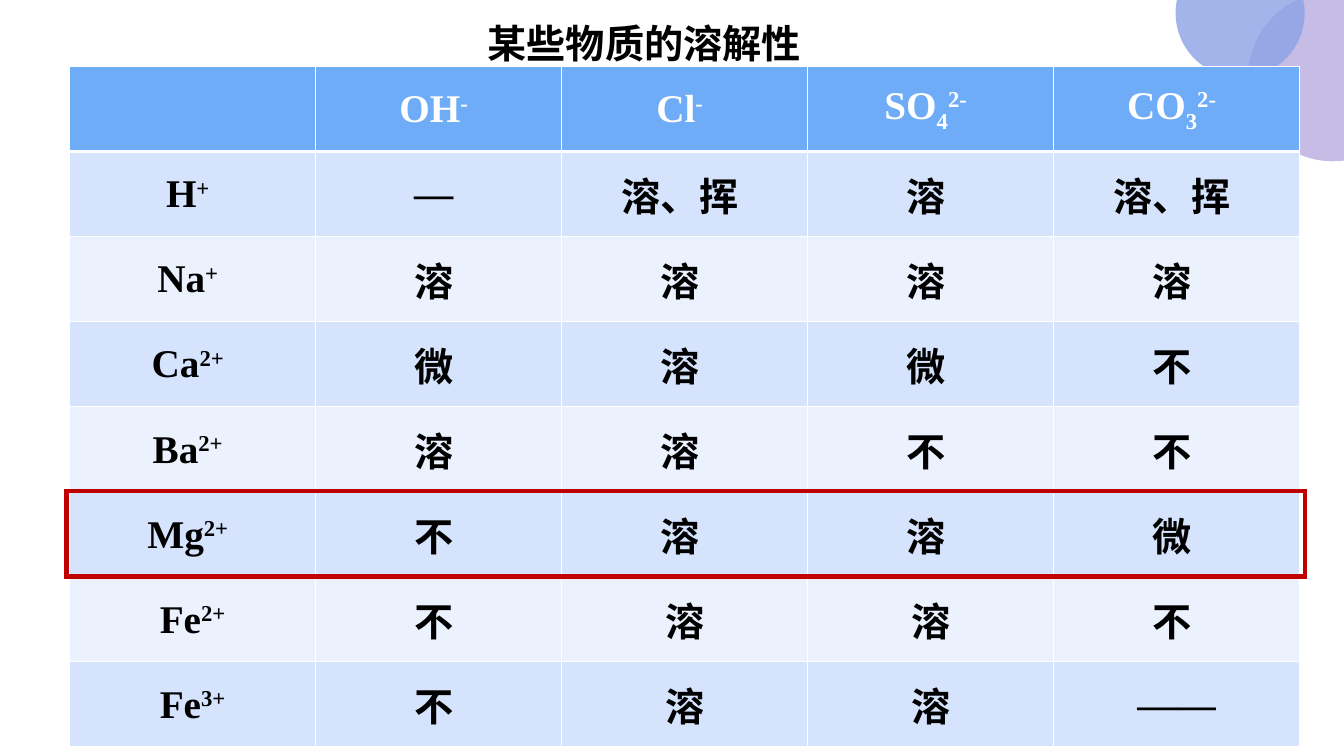
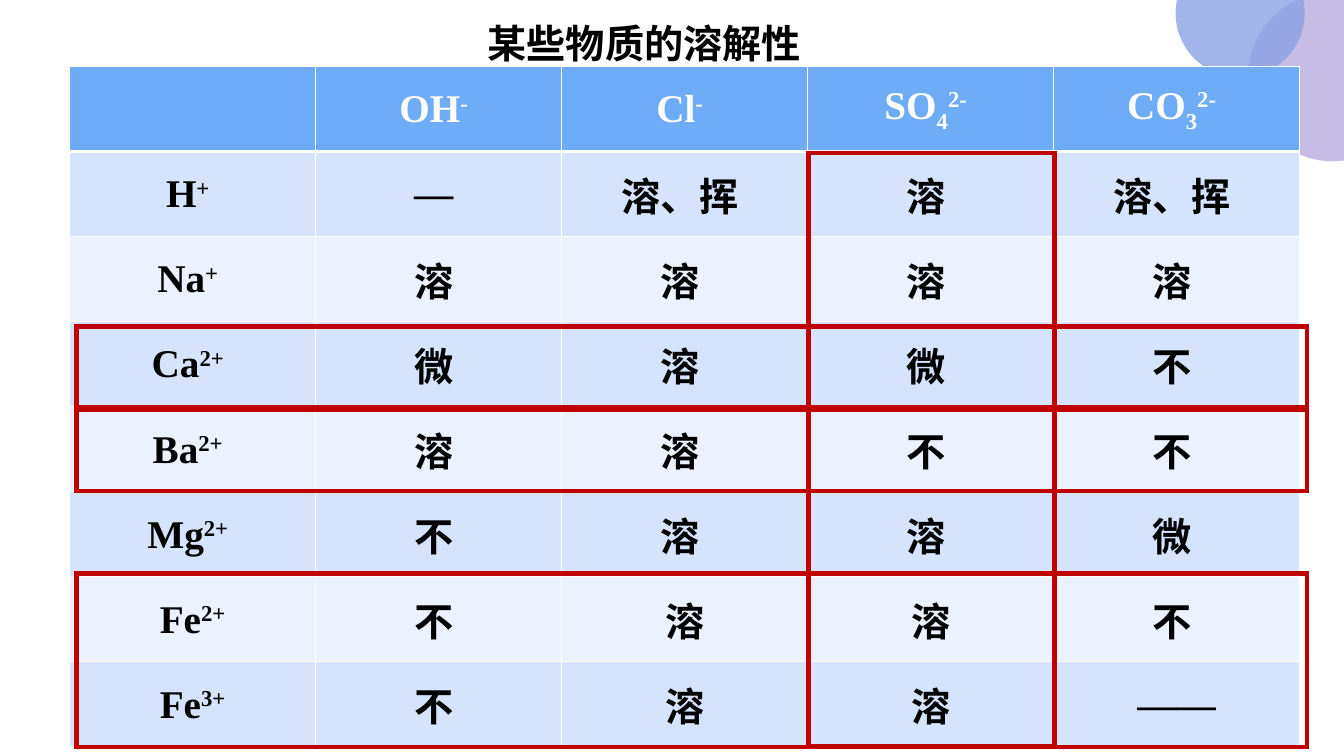
import math
import typing

import lxml.etree
import pptx
import pptx.dml.color
import pptx.enum.shapes
import pptx.enum.text
import pptx.oxml.ns
import pptx.presentation
import pptx.slide
import pptx.table
import pptx.text.text
import pptx.util

Inches = pptx.util.Inches
Pt = pptx.util.Pt
qn = pptx.oxml.ns.qn

SLIDE_WIDTH, SLIDE_HEIGHT = 13.33, 7.5
TITLE = "某些物质的溶解性"
BLACK, WHITE, RED = "000000", "FFFFFF", "C00000"
HEADER_BLUE = "6EACF7"
BANDS = ("D5E3FC", "EBF1FD")
TITLE_FONT = {"name": "Arial", "size": Pt(28), "bold": True}
CELL_FONT = {"name": "Times New Roman", "size": Pt(28), "bold": True}
CELL_FORMAT = {
    "vertical_anchor": pptx.enum.text.MSO_ANCHOR.MIDDLE,
    "margin_left": Inches(0.07),
    "margin_right": Inches(0.07),
    "margin_top": Inches(0.01),
    "margin_bottom": 0,
}
SUPERSCRIPT, SUBSCRIPT = 30000, -25000


class Box(typing.NamedTuple):
    left: float
    top: float
    width: float
    height: float

    def lengths(self) -> list[int]:
        return [Inches(value) for value in self]


class CutCircle(typing.NamedTuple):
    """A circle that the slide edges cut: arc stops in degrees, then corners."""
    x: float
    y: float
    radius: float
    color: str
    opacity: int
    stops: tuple[int, ...]
    corners: tuple[tuple[float, float], ...] = ()

    def point(self, degree: float, reach: float = 1) -> tuple[int, int]:
        angle = math.radians(degree)
        distance = self.radius * reach
        return (Inches(self.x + distance * math.cos(angle)),
                Inches(self.y + distance * math.sin(angle)))


class Ion(typing.NamedTuple):
    symbol: str
    charge: str = ""
    count: str = ""
    tail: str = " "


class Cation(typing.NamedTuple):
    ion: Ion
    solubility: tuple[str, ...]


TITLE_BOX = Box(0.76, 0.14, 11.26, 0.57)
TABLE_BOX = Box(0.69, 0.66, 12.2, 6.75)
CORNER_CIRCLES = (
    CutCircle(13.22, 0.76, 0.84, "A595D7", 63, (82, 90, 180, 245), ((SLIDE_WIDTH, 0),)),
    CutCircle(12.3, 0.13, 0.64, "8CA2E6", 80, (-12, 0, 90, 180, 192)),
)
ANIONS = (Ion("OH", "-"), Ion("Cl", "-"), Ion("SO", "2-", "4"), Ion("CO", "2-", "3"))
CATIONS = (
    Cation(Ion("H", "+"), ("— ", "溶、挥 ", "溶 ", "溶、挥 ")),
    Cation(Ion("Na", "+"), ("溶 ", "溶 ", "溶 ", "溶 ")),
    Cation(Ion("Ca", "2+"), ("微 ", "溶 ", "微 ", "不 ")),
    Cation(Ion("Ba", "2+"), ("溶 ", "溶 ", "不 ", "不 ")),
    Cation(Ion("Mg", "2+"), ("不 ", "溶 ", "溶 ", "微 ")),
    Cation(Ion("Fe", "2+", tail=""), ("不 ", "溶", "溶", "不 ")),
    Cation(Ion("Fe", "3+", tail=""), ("不 ", "溶", "溶", "——")),
)
# Red frames, one tuple per slide
HIGHLIGHTS = (
    (Box(0.66, 4.87, 12.28, 0.85),),
    (
        Box(0.76, 3.24, 12.2, 0.8),
        Box(8.02, 1.52, 2.44, 5.88),
        Box(0.76, 4.07, 12.2, 0.8),
        Box(0.76, 5.69, 12.2, 1.72),
    ),
)


def rgb(color: str) -> pptx.dml.color.RGBColor:
    return pptx.dml.color.RGBColor.from_string(color)


def apply(target: typing.Any, values: dict[str, typing.Any]) -> None:
    for name, value in values.items():
        setattr(target, name, value)


def add_run(paragraph: pptx.text.text._Paragraph, text: str, font: dict,
            color: str, baseline: int = 0) -> None:
    run = paragraph.add_run()
    run.text = text
    apply(run.font, font)
    run.font.color.rgb = rgb(color)
    if baseline:
        run._r.get_or_add_rPr().set("baseline", str(baseline))


def add_corner_circle(slide: pptx.slide.Slide, circle: CutCircle) -> None:
    """Draw the visible part of a circle and move it to the layout."""
    points = [circle.point(stop) for stop in circle.stops]
    points += [(Inches(x), Inches(y)) for x, y in circle.corners]
    builder = slide.shapes.build_freeform(*points[0])
    builder.add_line_segments(points[1:], close=True)
    shape = builder.convert_to_shape()
    shape.shadow.inherit = False
    shape.line.fill.background()
    shape.fill.solid()
    shape.fill.fore_color.rgb = rgb(circle.color)
    properties = shape._element.spPr
    fill_color = properties.find(f"{qn('a:solidFill')}/{qn('a:srgbClr')}")
    alpha = lxml.etree.SubElement(fill_color, qn("a:alpha"))
    alpha.set("val", str(circle.opacity * 1000))

    # Bend the straight segments between arc stops into curves
    segments = list(properties.iter(qn("a:lnTo")))
    for segment, start, end in zip(segments, circle.stops, circle.stops[1:]):
        handle = 4 / 3 * math.tan(math.radians(end - start) / 4)
        reach = math.hypot(1, handle)
        turn = math.degrees(math.atan(handle))
        segment.tag = qn("a:cubicBezTo")
        for index, degree in enumerate((start + turn, end - turn)):
            x, y = circle.point(degree, reach)
            control = lxml.etree.Element(qn("a:pt"))
            control.set("x", str(x - shape.left))
            control.set("y", str(y - shape.top))
            segment.insert(index, control)
    slide.slide_layout.shapes._spTree.append(shape._element)


def add_title(slide: pptx.slide.Slide) -> None:
    title = slide.shapes.title
    apply(title, dict(zip(Box._fields, TITLE_BOX.lengths())))
    apply(title.text_frame, {
        "word_wrap": True,
        "auto_size": pptx.enum.text.MSO_AUTO_SIZE.NONE,
        "vertical_anchor": pptx.enum.text.MSO_ANCHOR.TOP,
    })
    paragraph = title.text_frame.paragraphs[0]
    paragraph.alignment = pptx.enum.text.PP_ALIGN.CENTER
    add_run(paragraph, TITLE, TITLE_FONT, BLACK)


def add_bottom_border(cell: pptx.table._Cell, color: str, width: float) -> None:
    border = lxml.etree.Element(qn("a:lnB"))
    border.set("w", str(Pt(width)))
    fill = lxml.etree.SubElement(border, qn("a:solidFill"))
    lxml.etree.SubElement(fill, qn("a:srgbClr")).set("val", color)
    cell._tc.get_or_add_tcPr().insert(0, border)


def add_solubility_table(slide: pptx.slide.Slide) -> None:
    # Plain answers are symbols without count or charge
    rows = [(Ion("", tail=""), *ANIONS)]
    rows += [(cation.ion, *(Ion(answer, tail="") for answer in cation.solubility))
             for cation in CATIONS]
    table = slide.shapes.add_table(len(rows), len(rows[0]), *TABLE_BOX.lengths()).table
    for column in table.columns:
        column.width = Inches(TABLE_BOX.width / len(rows[0]))
    for row_index, ions in enumerate(rows):
        table.rows[row_index].height = Inches(TABLE_BOX.height / len(rows))
        is_header = row_index == 0
        fill = HEADER_BLUE if is_header else BANDS[(row_index - 1) % 2]
        color = WHITE if is_header else BLACK
        for column_index, ion in enumerate(ions):
            cell = table.cell(row_index, column_index)
            apply(cell, CELL_FORMAT)
            cell.fill.solid()
            cell.fill.fore_color.rgb = rgb(fill)
            if is_header:
                add_bottom_border(cell, WHITE, 3)
            paragraph = cell.text_frame.paragraphs[0]
            paragraph.alignment = pptx.enum.text.PP_ALIGN.CENTER
            parts = ((ion.symbol, 0), (ion.count, SUBSCRIPT),
                     (ion.charge, SUPERSCRIPT), (ion.tail, 0))
            for text, baseline in parts:
                if text:
                    add_run(paragraph, text, CELL_FONT, color, baseline)


def add_highlight(slide: pptx.slide.Slide, box: Box) -> None:
    frame = slide.shapes.add_shape(
        pptx.enum.shapes.MSO_SHAPE.RECTANGLE, *box.lengths())
    frame.shadow.inherit = False
    frame.fill.background()
    frame.line.color.rgb = rgb(RED)
    frame.line.width = Pt(3)
    # Square corners
    outline = frame._element.spPr.find(qn("a:ln"))
    lxml.etree.SubElement(outline, qn("a:miter")).set("lim", "800000")


def main() -> None:
    deck = pptx.Presentation()
    deck.slide_width, deck.slide_height = Inches(SLIDE_WIDTH), Inches(SLIDE_HEIGHT)
    title_only = deck.slide_layouts[5]
    for highlights in HIGHLIGHTS:
        slide = deck.slides.add_slide(title_only)
        add_title(slide)
        add_solubility_table(slide)
        for box in highlights:
            add_highlight(slide, box)
    # Corner decoration, shared through the layout
    for circle in CORNER_CIRCLES:
        add_corner_circle(deck.slides[0], circle)
    deck.save("out.pptx")


if __name__ == "__main__":
    main()
